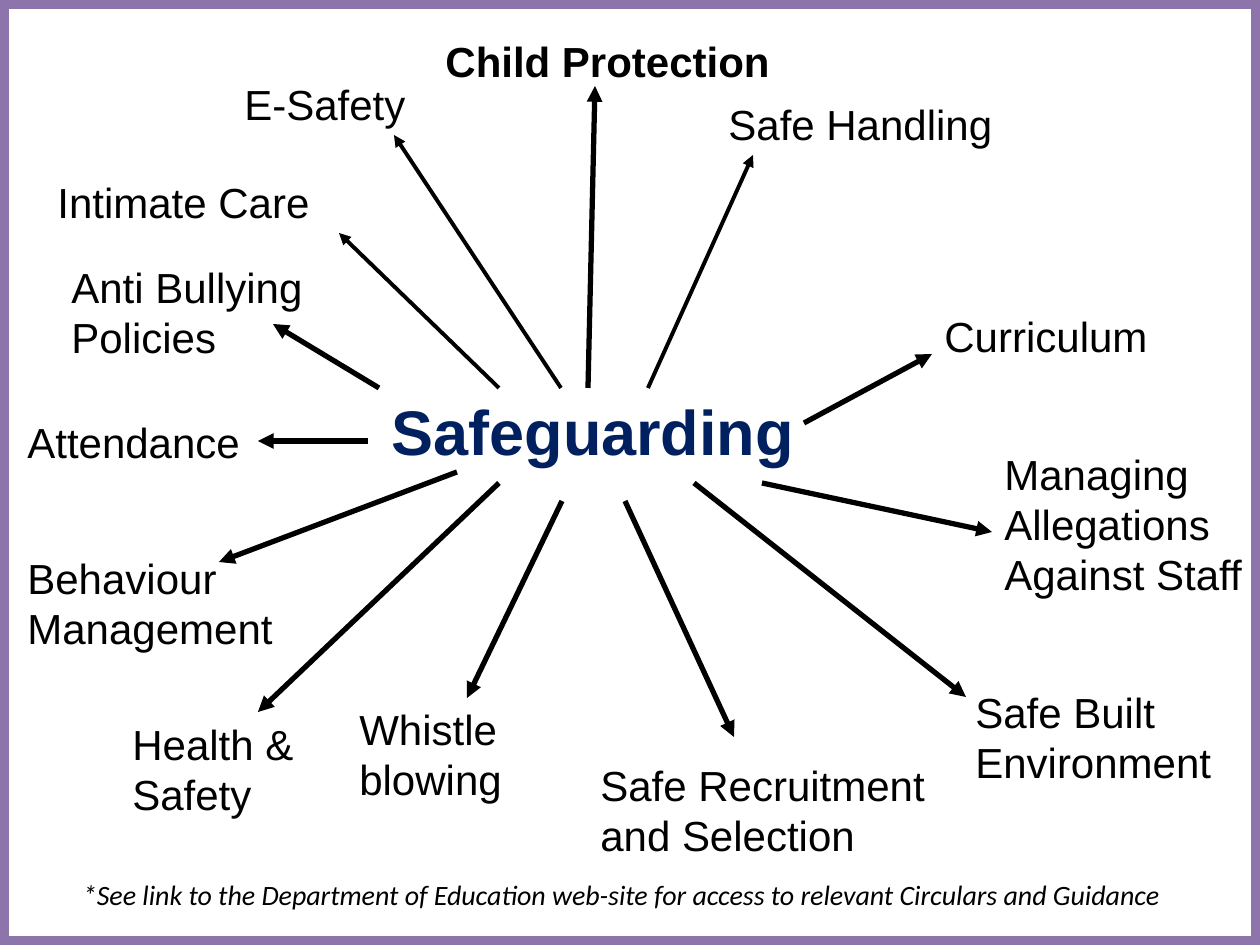
from lxml import etree
from pptx import Presentation
from pptx.dml.color import RGBColor as RGB
from pptx.enum.shapes import MSO_CONNECTOR as CONN, MSO_SHAPE as SHAPE
from pptx.enum.text import MSO_ANCHOR as ANCHOR, MSO_AUTO_SIZE as AUTO, PP_ALIGN as ALIGN
from pptx.oxml.ns import qn
from pptx.util import Emu, Pt

COLORS = {"ink": "000000", "navy": "002060", "frame": "8D74AB", "paper": "FFFFFF"}
SCALE = 914400 / 126


def px(n):
    return Emu(round(n * SCALE))


def write(sp, text, size, font="Arial", color="ink", bold=False, italic=False, align=ALIGN.LEFT):
    tf = sp.text_frame
    tf.word_wrap = True
    tf.auto_size = AUTO.NONE
    tf.vertical_anchor = ANCHOR.TOP
    tf.text = text
    for p in tf.paragraphs:
        p.alignment = align
        p.font.name = font
        p.font.size = Pt(size)
        p.font.bold = bold
        p.font.italic = italic
        p.font.color.rgb = RGB.from_string(COLORS[color])


prs = Presentation()
prs.slide_width, prs.slide_height = px(1260), px(945)
s = prs.slides.add_slide(prs.slide_layouts[5])

title = s.shapes.title
title.left, title.top, title.width, title.height = px(379), px(386), px(451), px(89)
write(title, "Safeguarding", 36, color="navy", bold=True)

frame = s.shapes.add_shape(SHAPE.RECTANGLE, 0, 0, prs.slide_width, prs.slide_height)
frame.shadow.inherit = False
frame.fill.solid()
frame.fill.fore_color.rgb = RGB.from_string(COLORS["paper"])
frame.line.color.rgb = RGB.from_string(COLORS["frame"])
frame.line.width = Pt(10)
title.element.addprevious(frame.element)

topics = [
    ("Child Protection", 433, 29, 483, 63),
    ("Curriculum", 932, 304, 284, 63),
    ("Managing Allegations Against Staff", 992, 442, 273, 165),
    ("Safe Recruitment and Selection", 588, 753, 378, 115),
    ("Health & Safety", 120, 712, 199, 115),
    ("Behaviour Management", 15, 546, 273, 115),
    ("Attendance", 15, 410, 273, 63),
    ("Anti Bullying Policies", 59, 255, 273, 115),
    ("Whistle\nblowing", 347, 697, 242, 115),
    ("Safe Built Environment", 963, 680, 315, 115),
    ("Safe Handling", 716, 92, 348, 63),
    ("Intimate Care", 45, 170, 349, 63),
    ("E-Safety", 232, 72, 213, 63),
]
for text, x, y, w, h in topics:
    sp = s.shapes.add_textbox(px(x), px(y), px(w), px(h))
    write(sp, text, 24, bold=text == "Child Protection")

arrows = [
    (588, 388, 595, 86, 3),
    (804, 423, 932, 354, 3),
    (762, 483, 992, 532, 3),
    (625, 501, 734, 737, 3),
    (499, 483, 258, 712, 3),
    (457, 472, 219, 562, 3),
    (368, 441, 258, 441, 3),
    (562, 501, 467, 698, 3),
    (694, 483, 966, 697, 3),
    (648, 388, 753, 155, 2.25),
    (379, 388, 273, 324, 3),
    (499, 388, 339, 233, 2.25),
    (561, 388, 394, 135, 2.25),
]
for x1, y1, x2, y2, width in arrows:
    arrow = s.shapes.add_connector(CONN.STRAIGHT, px(x1), px(y1), px(x2), px(y2))
    arrow.line.color.rgb = RGB.from_string(COLORS["ink"])
    arrow.line.width = Pt(width)
    etree.SubElement(arrow.line._get_or_add_ln(), qn("a:tailEnd"), type="triangle")
    etree.SubElement(arrow.element.spPr, qn("a:effectLst"))

note = s.shapes.add_textbox(px(5), px(871), px(1233), px(47))
write(note, "*See link to the Department of Education web-site for access to relevant Circulars and Guidance",
      16, font="Calibri", italic=True, align=ALIGN.CENTER)

prs.save("out.pptx")
